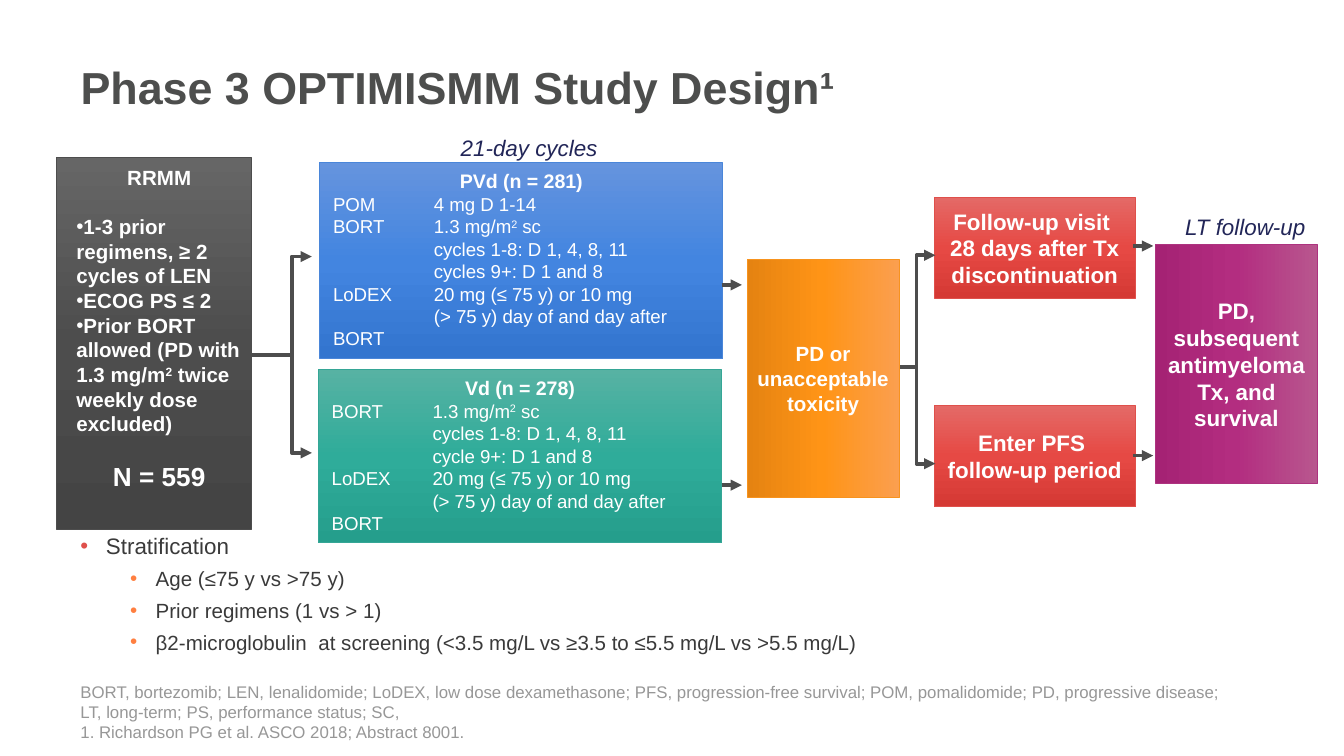
from copy import deepcopy

from lxml import etree
from pptx import Presentation
from pptx.dml.color import RGBColor
from pptx.enum import shapes, text
from pptx.oxml import ns
from pptx.util import Inches, Pt

rgb = RGBColor.from_string
LEFT, CENTER = text.PP_ALIGN.LEFT, text.PP_ALIGN.CENTER
TOP, MIDDLE, BOTTOM = text.MSO_ANCHOR.TOP, text.MSO_ANCHOR.MIDDLE, text.MSO_ANCHOR.BOTTOM
GREY = "4D4D4D"


def add_text(tf, words, size=12, color="FFFFFF", bold=False, italic=False,
             align=LEFT, before=0, bullet=None, indent=(0, 0), tab=None):
    """Add one paragraph; text between ^ marks is superscript, \\v breaks a line."""
    p = tf.paragraphs[0]
    if p.runs:
        p = tf.add_paragraph()
    pPr = p._p.get_or_add_pPr()
    if bullet:
        pPr.set("marL", str(Inches(indent[0])))
        pPr.set("indent", str(Inches(indent[1])))
        clr = etree.SubElement(pPr, ns.qn("a:buClr"))
        etree.SubElement(clr, ns.qn("a:srgbClr"), val=bullet)
        etree.SubElement(pPr, ns.qn("a:buFont"), typeface="Arial")
        etree.SubElement(pPr, ns.qn("a:buChar"), char="•")
    if tab:
        tabs = etree.SubElement(pPr, ns.qn("a:tabLst"))
        etree.SubElement(tabs, ns.qn("a:tab"), pos=str(Inches(tab)), algn="l")
    p.alignment = align
    p.space_before = Pt(before)
    for i, part in enumerate(words.split("^")):
        for j, line in enumerate(part.split("\v")):
            if j:
                p.add_line_break()
            r = p.add_run()
            r.text = line
            r.font.name, r.font.size = "Arial", Pt(size)
            r.font.bold, r.font.italic = bold, italic
            r.font.color.rgb = rgb(color)
            if i % 2:
                r.font._element.set("baseline", "30000")


def add_box(x, y, w, h, stops=None, line=None, angle=270, anchor=TOP, wrap=True):
    """Add a gradient rectangle, or a text box if no stops; return its text frame."""
    box = [Inches(v) for v in (x, y, w, h)]
    if stops:
        sp = s.shapes.add_shape(shapes.MSO_SHAPE.RECTANGLE, *box)
        sp.shadow.inherit = False
        sp.fill.gradient()
        sp.fill.gradient_angle = angle
        gs_list = sp._element.spPr.find(".//" + ns.qn("a:gsLst"))
        gs_list.insert(1, deepcopy(gs_list[0]))
        for stop, color, pos in zip(sp.fill.gradient_stops, stops, (0, 0.5, 1)):
            stop.color.rgb = rgb(color)
            stop.position = pos
        sp.line.color.rgb = rgb(line)
        sp.line.width = Pt(0.5)
    else:
        sp = s.shapes.add_textbox(*box)
    tf = sp.text_frame
    tf.word_wrap = wrap
    tf.vertical_anchor = anchor
    return tf


# Widescreen slide, 16 to 9
prs = Presentation()
prs.slide_width = Inches(10)
prs.slide_height = Inches(10 * 9 / 16)
s = prs.slides.add_slide(prs.slide_layouts[5])

# Title
title = s.shapes.title
title.left, title.top, title.width, title.height = [Inches(v) for v in (0.5, 0.16, 8.81, 0.97)]
title.text_frame.auto_size = text.MSO_AUTO_SIZE.NONE
title.text_frame.vertical_anchor = MIDDLE
add_text(title.text_frame, "Phase 3 OPTIMISMM Study Design¹", size=24, color="4D4E4D", bold=True)

# Footnotes
tf = add_box(0.5, 5.21, 8.81, 0.36, anchor=BOTTOM)
for words in (
    "BORT, bortezomib; LEN, lenalidomide; LoDEX, low dose dexamethasone; PFS, progression-free "
    "survival; POM, pomalidomide; PD, progressive disease; LT, long-term; PS, performance status; SC,",
    "1. Richardson PG et al. ASCO 2018; Abstract 8001.",
):
    add_text(tf, words, size=9, color="979797")

# Stratification factors
tf = add_box(0.5, 3.91, 8.81, 1.18)
add_text(tf, "Stratification", color="3A3A3A", bullet="DF504B", indent=(0.19, -0.19))
for words in (
    "Age (≤75 y vs >75 y)",
    "Prior regimens (1 vs > 1)",
    "β2-microglobulin  at screening (<3.5 mg/L vs ≥3.5 to ≤5.5 mg/L vs >5.5 mg/L)",
):
    add_text(tf, words, size=11, color="3A3A3A", before=3.8, bullet="FF7F40", indent=(0.56, -0.19))

# Patient population
add_box(0.42, 1.17, 1.45, 2.77, ("666666", GREY, "444444"), GREY)
tf = add_box(0.47, 1.18, 1.43, 2.56)
add_text(tf, "RRMM", size=11, bold=True, align=CENTER)
for words, before in (
    ("1-3 prior regimens, ≥ 2 cycles of LEN", 13),
    ("ECOG PS ≤ 2", 0),
    ("Prior BORT allowed (PD with 1.3 mg/m^2^ twice weekly dose excluded)", 0),
):
    add_text(tf, words, size=11, bold=True, before=before, bullet="FFFFFF")
add_text(tf, "N = 559", size=14, bold=True, align=CENTER, before=13)

# Treatment arms
lodex = "LoDEX\t20 mg (≤ 75 y) or 10 mg\v\t(> 75 y) day of and day after\vBORT"
arms = (
    ((2.38, 1.21, 3, 1.46), ("6594DE", "4385E0", "3375CF"), "4A86D9", "PVd (n = 281)",
     ("POM\t4 mg D 1-14", "BORT\t1.3 mg/m^2^ sc",
      "\tcycles 1-8: D 1, 4, 8, 11\v\tcycles 9+: D 1 and 8", lodex)),
    ((2.37, 2.75, 3, 1.29), ("57B2A3", "2FAC9A", "259E8C"), "35A696", "Vd (n = 278)",
     ("BORT\t1.3 mg/m^2^ sc", "\tcycles 1-8: D 1, 4, 8, 11", "\tcycle 9+: D 1 and 8", lodex)),
)
for place, stops, line, name, doses in arms:
    tf = add_box(*place, stops, line)
    add_text(tf, name, size=10.5, bold=True, align=CENTER)
    for words in doses:
        add_text(tf, words, size=10, tab=0.75)

# Outcome and follow-up boxes
red = ("E46966", "E64944", "D53934")
for place, stops, line, angle, size, words in (
    ((5.56, 1.93, 1.13, 1.77), ("E58311", "FF9416", "FB9F4F"), "F7931E", 0, 11,
     "PD or unacceptable toxicity"),
    ((8.6, 1.82, 1.2, 1.78), ("A52274", "B32D80", "B8568E"), "AD337F", 0, 12,
     "PD, subsequent antimyeloma Tx, and survival"),
    ((6.95, 1.47, 1.5, 0.75), red, "DF504B", 270, 12,
     "Follow-up visit \v28 days after Tx discontinuation"),
    ((6.95, 3.02, 1.5, 0.75), red, "DF504B", 270, 12, "Enter PFS \vfollow-up period"),
):
    tf = add_box(*place, stops, line, angle, MIDDLE)
    # Narrow boxes need slim side margins for their longest word
    if angle == 0:
        tf.margin_left = tf.margin_right = Inches(0.05)
    add_text(tf, words, size=size, bold=True, align=CENTER)

# Captions
for x, y, w, words in ((3.33, 0.95, 1.23, "21-day cycles"), (8.72, 1.54, 1.1, "LT follow-up")):
    add_text(add_box(x, y, w, 0.3, wrap=False), words, color="222658", italic=True)

# Arrows: x1, y1, x2, y2, bend as a share of the width (None is straight)
for x1, y1, x2, y2, bend in (
    (1.87, 2.64, 2.32, 1.91, 0.67),
    (1.87, 2.64, 2.32, 3.37, 0.67),
    (5.37, 2.12, 5.52, 2.12, None),
    (5.37, 3.61, 5.52, 3.61, None),
    (6.7, 2.73, 6.96, 1.9, 0.46),
    (6.7, 2.73, 6.96, 3.45, 0.46),
    (8.43, 1.83, 8.58, 1.83, None),
    (8.43, 3.39, 8.58, 3.39, None),
):
    kind = shapes.MSO_CONNECTOR.ELBOW if bend else shapes.MSO_CONNECTOR.STRAIGHT
    arrow = s.shapes.add_connector(kind, *[Inches(v) for v in (x1, y1, x2, y2)])
    arrow.line.color.rgb = rgb(GREY)
    arrow.line.width = Pt(2)
    etree.SubElement(arrow.line._get_or_add_ln(), ns.qn("a:tailEnd"), type="triangle")
    spPr = arrow._element.spPr
    etree.SubElement(spPr, ns.qn("a:effectLst"))
    if bend:
        guides = spPr.find(".//" + ns.qn("a:avLst"))
        etree.SubElement(guides, ns.qn("a:gd"), name="adj1", fmla=f"val {round(bend * 100000)}")

prs.save("out.pptx")
